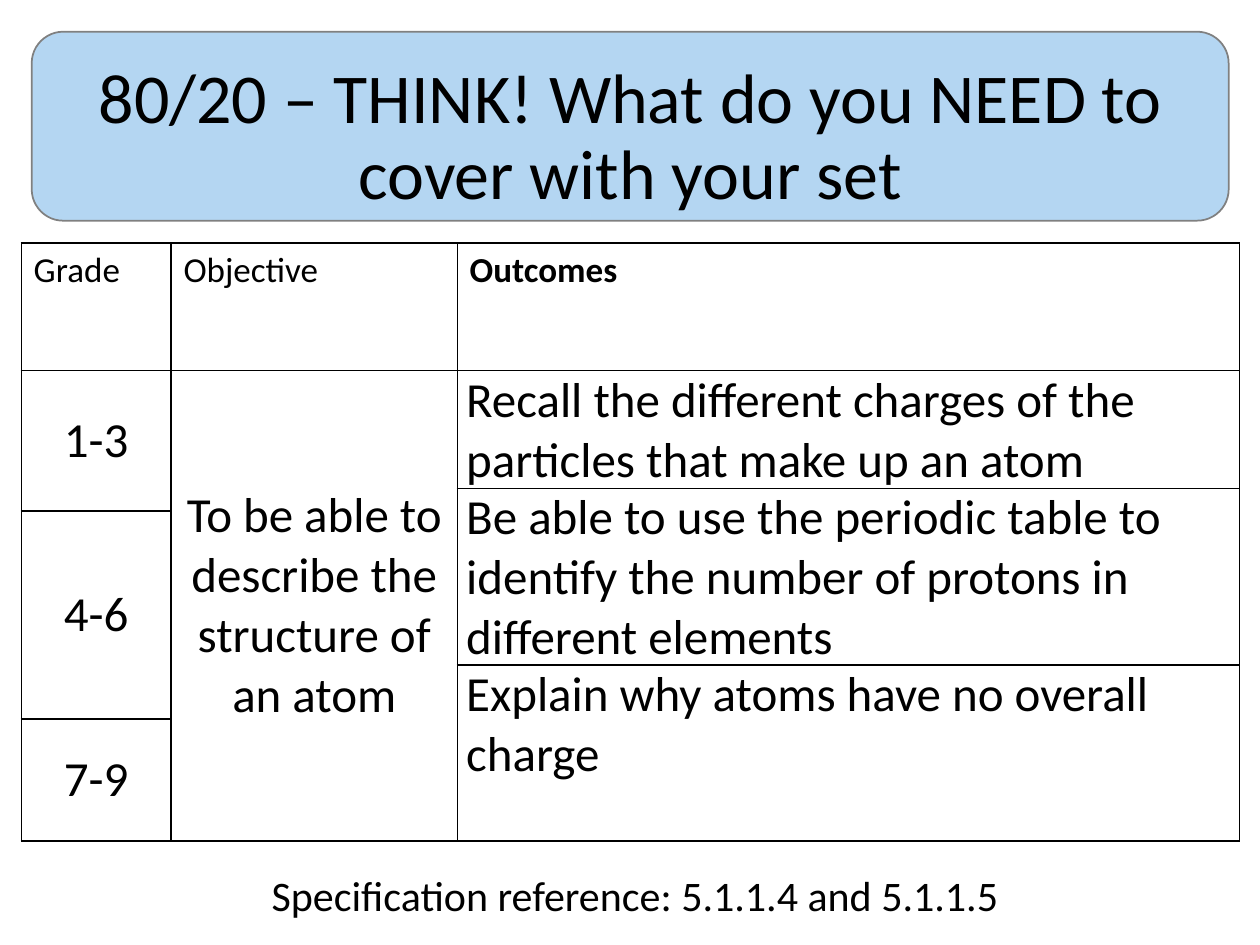
from dataclasses import dataclass

from lxml.etree import SubElement
from pptx import Presentation
from pptx.dml.color import RGBColor
from pptx.enum.shapes import MSO_SHAPE
from pptx.enum.text import MSO_ANCHOR, MSO_AUTO_SIZE, PP_ALIGN
from pptx.oxml.ns import qn
from pptx.util import Cm, Pt


@dataclass(frozen=True)
class Theme:
    font: str = "Calibri"
    ink: str = "000000"
    paper: str = "FFFFFF"
    banner: str = "B4D6F2"
    banner_edge: str = "808080"
    title: int = 40
    body: int = 28
    reference: int = 24
    header: int = 20
    rule: int = 1


THEME = Theme()


@dataclass(frozen=True)
class Entry:
    """A table entry and the block of rows it covers."""
    row: int
    col: int
    text: str
    rows: int = 1
    size: int = THEME.body
    bold: bool = False
    centred: bool = False
    margins: tuple[float, float] = (0.25, 0.13)


COLUMN_WIDTHS = (3.02, 5.77, 15.77)
ROW_HEIGHTS = (2.57, 2.36, 0.46, 3.1, 1.09, 2.46)
TIGHT = (0.18, 0)

ENTRIES = (
    Entry(0, 0, "Grade", size=THEME.header),
    Entry(0, 1, "Objective", size=THEME.header),
    Entry(0, 2, "Outcomes", size=THEME.header, bold=True),
    Entry(1, 0, "1-3", rows=2, centred=True),
    Entry(3, 0, "4-6", rows=2, centred=True),
    Entry(5, 0, "7-9", centred=True),
    Entry(1, 1, "To be able to describe the structure of an atom", rows=5, centred=True),
    Entry(1, 2, "Recall the different charges of the particles that make up an atom",
          margins=TIGHT),
    Entry(2, 2, "Be able to use the periodic table to identify the number of protons "
          "in different elements", rows=2, margins=TIGHT),
    Entry(4, 2, "Explain why atoms have no overall charge", rows=2, margins=TIGHT),
)


def write(frame, text: str, size: int, align: PP_ALIGN, bold: bool = False) -> None:
    frame.text = text
    paragraph = frame.paragraphs[0]
    paragraph.alignment = align
    font = paragraph.runs[0].font
    font.name, font.size, font.bold = THEME.font, Pt(size), bold
    font.color.rgb = RGBColor.from_string(THEME.ink)


def rule_and_fill(cell) -> None:
    properties = cell._tc.get_or_add_tcPr()
    for side in ("lnL", "lnR", "lnT", "lnB"):
        line = SubElement(properties, qn(f"a:{side}"), w=str(Pt(THEME.rule)))
        SubElement(SubElement(line, qn("a:solidFill")), qn("a:srgbClr"), val=THEME.ink)
    cell.fill.solid()
    cell.fill.fore_color.rgb = RGBColor.from_string(THEME.paper)


def add_heading(slide) -> None:
    banner = slide.shapes.add_shape(
        MSO_SHAPE.ROUNDED_RECTANGLE, Cm(0.64), Cm(0.64), Cm(24.13), Cm(3.81))
    banner.shadow.inherit = False
    banner.fill.solid()
    banner.fill.fore_color.rgb = RGBColor.from_string(THEME.banner)
    banner.line.color.rgb = RGBColor.from_string(THEME.banner_edge)
    banner.line.width = Pt(THEME.rule)

    title = slide.shapes.title
    title.left, title.top, title.width, title.height = Cm(0.64), Cm(0.36), Cm(24.13), Cm(4.09)
    write(title.text_frame, "80/20 – THINK! What do you NEED to cover with your set",
          THEME.title, PP_ALIGN.CENTER)
    title.text_frame.paragraphs[0].line_spacing = 0.9
    title.text_frame.vertical_anchor = MSO_ANCHOR.BOTTOM
    title.text_frame.auto_size = MSO_AUTO_SIZE.NONE
    # The banner belongs behind the title
    title._element.addprevious(banner._element)


def add_reference(slide) -> None:
    reference = slide.shapes.add_textbox(Cm(0.64), Cm(17.4), Cm(24.33), Cm(1.27))
    reference.text_frame.word_wrap = True
    reference.text_frame.auto_size = MSO_AUTO_SIZE.SHAPE_TO_FIT_TEXT
    write(reference.text_frame, "Specification reference: 5.1.1.4 and 5.1.1.5",
          THEME.reference, PP_ALIGN.CENTER)


def add_outcomes(slide) -> None:
    table = slide.shapes.add_table(
        len(ROW_HEIGHTS), len(COLUMN_WIDTHS), Cm(0.43), Cm(4.9),
        Cm(sum(COLUMN_WIDTHS)), Cm(sum(ROW_HEIGHTS))).table
    table.first_row = table.horz_banding = False
    for column, width in zip(table.columns, COLUMN_WIDTHS):
        column.width = Cm(width)
    for row, height in zip(table.rows, ROW_HEIGHTS):
        row.height = Cm(height)
    for cell in table.iter_cells():
        rule_and_fill(cell)

    for entry in ENTRIES:
        cell = table.cell(entry.row, entry.col)
        if entry.rows > 1:
            cell.merge(table.cell(entry.row + entry.rows - 1, entry.col))
        across, down = entry.margins
        cell.margin_left = cell.margin_right = Cm(across)
        cell.margin_top = cell.margin_bottom = Cm(down)
        cell.vertical_anchor = MSO_ANCHOR.MIDDLE if entry.centred else MSO_ANCHOR.TOP
        align = PP_ALIGN.CENTER if entry.centred else PP_ALIGN.LEFT
        write(cell.text_frame, entry.text, entry.size, align, entry.bold)


def main() -> None:
    deck = Presentation()
    deck.slide_width, deck.slide_height = Cm(25.4), Cm(19.05)
    title_only = deck.slide_layouts[5]
    slide = deck.slides.add_slide(title_only)
    add_heading(slide)
    add_reference(slide)
    add_outcomes(slide)
    deck.save("out.pptx")


if __name__ == "__main__":
    main()
